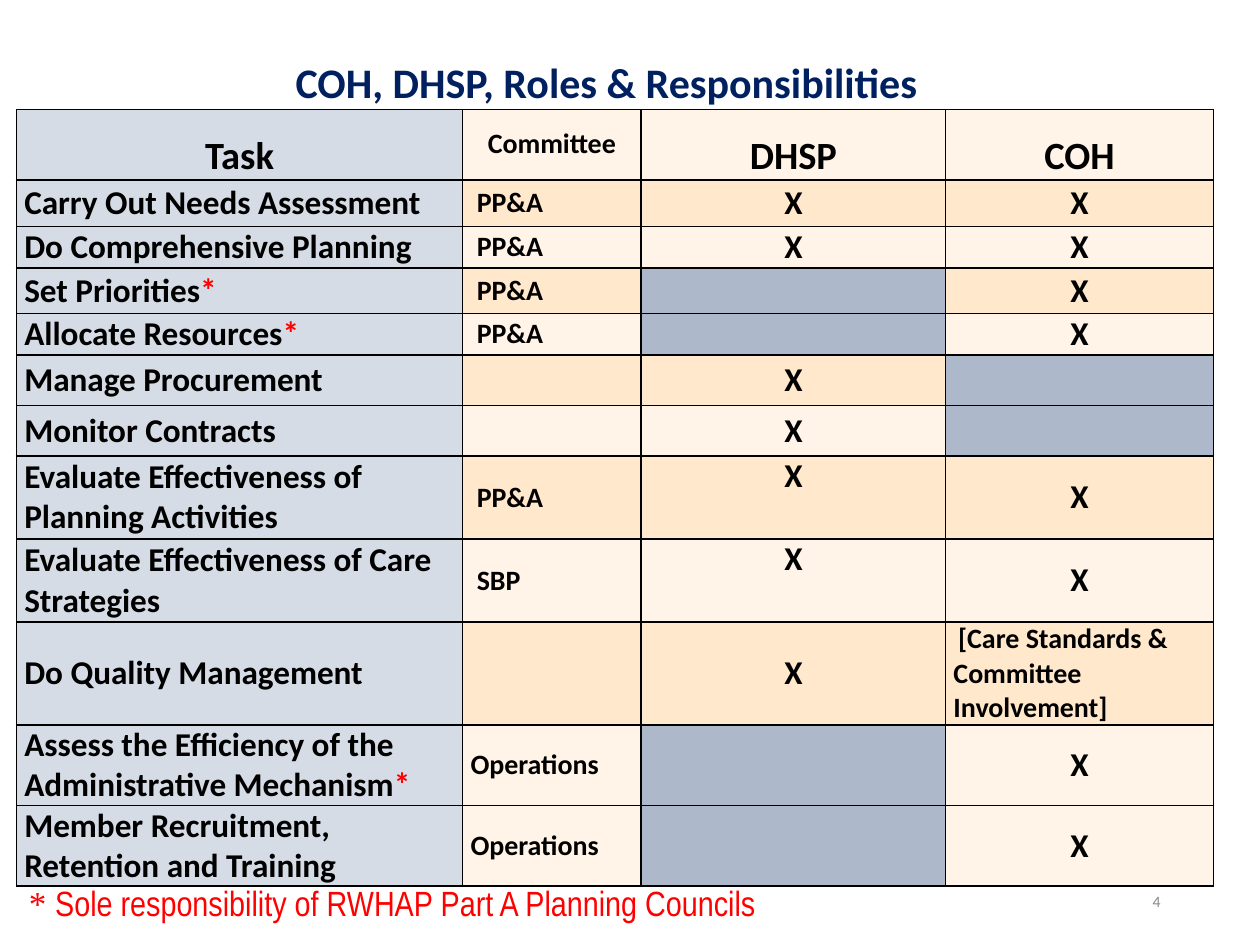
"""Build the COH and DHSP roles and responsibilities slide."""
from lxml import etree
from pptx import Presentation
from pptx.dml.color import RGBColor
from pptx.enum import text as t
from pptx.oxml import ns
from pptx.util import Pt

BLACK = RGBColor(0x00, 0x00, 0x00)
RED = RGBColor(0xFF, 0x00, 0x00)
NAVY = RGBColor(0x00, 0x20, 0x60)
GRAY = RGBColor(0x89, 0x89, 0x89)
TASK_FILL = RGBColor(0xD6, 0xDC, 0xE5)
LIGHT = RGBColor(0xFF, 0xF4, 0xE7)
PEACH = RGBColor(0xFF, 0xE8, 0xCB)
BLOCKED = RGBColor(0xAD, 0xB9, 0xCA)

LEFT, MIDDLE = t.PP_ALIGN.LEFT, t.MSO_ANCHOR.MIDDLE
CENTER, RIGHT, TOP = t.PP_ALIGN.CENTER, t.PP_ALIGN.RIGHT, t.MSO_ANCHOR.TOP

TITLE = "COH, DHSP, Roles & Responsibilities"
FOOTNOTE = "Sole responsibility of RWHAP Part A Planning Councils"
PAGE = "4"
INVOLVEMENT = "[Care Standards & Committee Involvement]"
HEADINGS = [("Task", 22), ("Committee", 16), ("DHSP", 22), ("COH", 22)]
HEADING_HEIGHT = 26.6
COLUMN_WIDTHS = [255, 102, 174, 153]
NONE = None
TASKS = [
    ("Carry Out Needs Assessment", "PP&A", "X", "X", PEACH, 26.6),
    ("Do Comprehensive Planning", "PP&A", "X", "X", LIGHT, 23.8),
    ("Set Priorities*", "PP&A", NONE, "X", PEACH, 26),
    ("Allocate Resources*", "PP&A", NONE, "X", LIGHT, 23.8),
    ("Manage Procurement", "", "X", NONE, PEACH, 28.8),
    ("Monitor Contracts", "", "X", NONE, LIGHT, 28.8),
    ("Evaluate Effectiveness of Planning Activities", "PP&A", "X", "X", PEACH, 47.5),
    ("Evaluate Effectiveness of Care Strategies", "SBP", "X", "X", LIGHT, 47.5),
    ("Do Quality Management", "", "X", INVOLVEMENT, PEACH, 39.6),
    ("Assess the Efficiency of the Administrative Mechanism*", "Operations", NONE, "X", LIGHT, 45.4),
    ("Member Recruitment, Retention and Training", "Operations", NONE, "X", LIGHT, 45.4),
]


def style(paragraph, size, color=BLACK, bold=True, align=LEFT, font="Calibri"):
    paragraph.alignment = align
    paragraph.font.size = Pt(size)
    paragraph.font.name = font
    paragraph.font.bold = bold
    paragraph.font.color.rgb = color


def add_border(cell):
    props = cell._tc.get_or_add_tcPr()
    for index, side in enumerate(("lnL", "lnR", "lnT", "lnB")):
        line = etree.Element(ns.qn(f"a:{side}"), w=str(Pt(1)))
        fill = etree.SubElement(line, ns.qn("a:solidFill"))
        etree.SubElement(fill, ns.qn("a:srgbClr"), val=str(BLACK))
        props.insert(index, line)


def fill_cell(cell, words, fill, size, align=LEFT, anchor=MIDDLE, indent=0):
    cell.margin_left = Pt(4.5 + indent)
    cell.margin_right = Pt(4.5)
    cell.margin_top = cell.margin_bottom = 0
    cell.vertical_anchor = anchor
    cell.fill.solid()
    cell.fill.fore_color.rgb = fill
    add_border(cell)
    paragraph = cell.text_frame.paragraphs[0]
    style(paragraph, size, align=align)
    body, star, _ = words.partition("*")
    if body:
        paragraph.add_run().text = body
    if star:
        mark = paragraph.add_run()
        mark.text = star
        mark.font.color.rgb = RED
    return paragraph


def add_text(slide, left, top, width, height, words, anchor=MIDDLE, **look):
    frame = slide.shapes.add_textbox(Pt(left), Pt(top), Pt(width), Pt(height)).text_frame
    frame.word_wrap = True
    frame.vertical_anchor = anchor
    paragraph = frame.paragraphs[0]
    paragraph.add_run().text = words
    style(paragraph, **look)
    return paragraph


def add_roles(slide):
    heights = [HEADING_HEIGHT] + [task[-1] for task in TASKS]
    roles = slide.shapes.add_table(
        len(heights), len(COLUMN_WIDTHS), Pt(9.4), Pt(62.6),
        Pt(sum(COLUMN_WIDTHS)), Pt(sum(heights))).table
    roles.first_row = roles.horz_banding = False
    for column, width in zip(roles.columns, COLUMN_WIDTHS):
        column.width = Pt(width)
    for row, height in zip(roles.rows, heights):
        row.height = Pt(height)

    for column, (heading, size) in enumerate(HEADINGS):
        fill = LIGHT if column else TASK_FILL
        paragraph = fill_cell(roles.cell(0, column), heading, fill, size, CENTER, TOP)
        paragraph.line_spacing = 1.5

    for row, (task, committee, dhsp, coh, band, _) in enumerate(TASKS, 1):
        fill_cell(roles.cell(row, 0), task, TASK_FILL, 19)
        indent = 0 if committee == "Operations" else 3.6
        fill_cell(roles.cell(row, 1), committee, band, 16, indent=indent)
        for column, duty in ((2, dhsp), (3, coh)):
            cell = roles.cell(row, column)
            if duty == INVOLVEMENT:
                paragraph = fill_cell(cell, duty, band, 16)
                paragraph._p.get_or_add_pPr().set("indent", str(Pt(2.7)))
            else:
                raised = column == 2 and task.startswith("Evaluate")
                fill_cell(cell, duty or "", band if duty else BLOCKED, 19,
                          CENTER, TOP if raised else MIDDLE)


def main():
    deck = Presentation()
    deck.slide_width, deck.slide_height = Pt(720), Pt(540)
    slide = deck.slides.add_slide(deck.slide_layouts[6])
    add_roles(slide)
    footnote = add_text(slide, 9.4, 500.4, 433.4, 31.7, "* ", TOP, size=20,
                        color=RED, bold=False, font="Arial Narrow")
    footnote.runs[0].font.name = "Times New Roman"
    footnote.add_run().text = FOOTNOTE
    footnote._parent.word_wrap = False
    title = add_text(slide, 6.4, 28.8, 680.4, 31, TITLE, size=24, color=NAVY, align=CENTER)
    title.line_spacing = 1.15
    add_text(slide, 508.3, 500.4, 162, 28.8, PAGE, size=9, color=GRAY, bold=False, align=RIGHT)
    deck.save("out.pptx")


if __name__ == "__main__":
    main()
